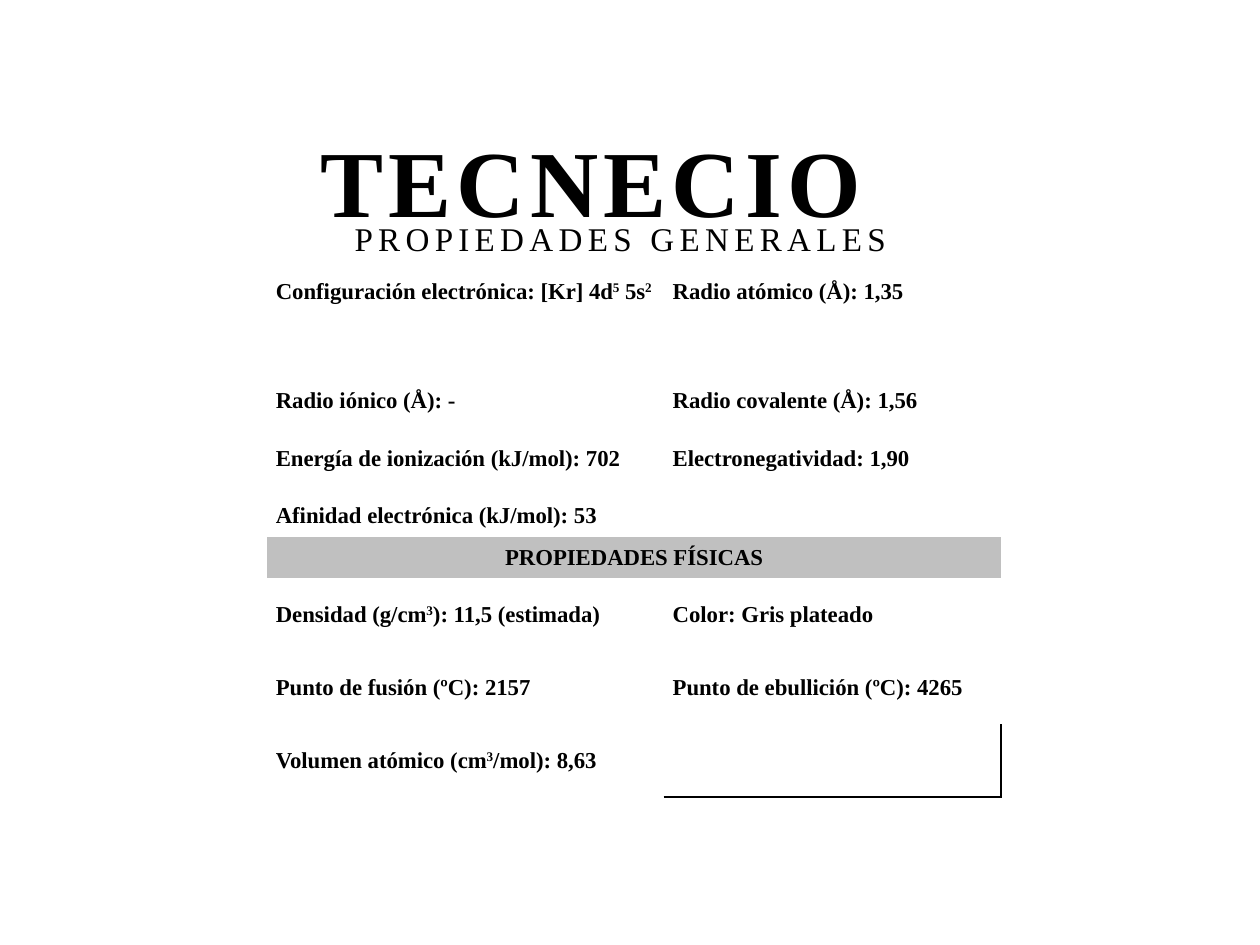
from lxml.etree import SubElement
from pptx import Presentation
from pptx.dml.color import RGBColor
from pptx.enum.text import MSO_ANCHOR as ANCHOR, MSO_AUTO_SIZE as AUTO, PP_ALIGN as ALIGN
from pptx.oxml import parse_xml
from pptx.oxml.ns import nsdecls, qn
from pptx.util import Cm, Pt

FONT = "Times New Roman"
NO_STYLE = "{2D5ABB26-0587-4C30-8999-92F81FD0307C}"
SECTION_ROW = 4
COLUMNS = [8.0, 6.8]
ROWS = [
    (3.56, "Configuración electrónica: [Kr] 4d^5^ 5s^2^", "Radio atómico (Å): 1,35"),
    (0.84, "Radio iónico (Å): -", "Radio covalente (Å): 1,56"),
    (1.47, "Energía de ionización (kJ/mol): 702", "Electronegatividad: 1,90"),
    (0.84, "Afinidad electrónica (kJ/mol): 53", ""),
    (0.84, "PROPIEDADES FÍSICAS", ""),
    (1.47, "Densidad (g/cm^3^): 11,5 (estimada)", "Color: Gris plateado"),
    (1.47, "Punto de fusión (ºC): 2157", "Punto de ebullición (ºC): 4265"),
    (1.47, "Volumen atómico (cm^3^/mol): 8,63", ""),
]


def rgb(value):
    """Return the colour of a hex string."""
    return RGBColor.from_string(value)


def set_attrs(obj, values):
    """Set every attribute of a format dict."""
    for name, value in values.items():
        setattr(obj, name, value)


def add_runs(p, text, size, bold=True):
    """Add runs to a paragraph, raising the parts between carets."""
    for i, part in enumerate(text.split("^")):
        if part:
            r = p.add_run()
            r.text = part
            set_attrs(r.font, {"name": FONT, "size": Pt(size), "bold": bold})
            r.font.color.rgb = rgb("000000")
            if i % 2:
                r.font._element.set("baseline", "30000")


def fill_heading(s, text, box, size, bold):
    """Place a heading placeholder and write its letter-spaced text."""
    set_attrs(s, dict(zip(("left", "top", "width", "height"), map(Cm, box))))
    tf = s.text_frame
    set_attrs(tf, {"word_wrap": True, "auto_size": AUTO.NONE, "vertical_anchor": ANCHOR.BOTTOM})
    p = tf.paragraphs[0]
    set_attrs(p, {"alignment": ALIGN.CENTER, "space_before": Pt(0)})
    add_runs(p, text, size, bold)
    p.runs[0].font._element.set("spc", "300")


def fill_cell(cell, text):
    """Write one table cell without a fill."""
    set_attrs(cell, {
        "margin_left": Cm(0.18), "margin_right": Cm(0.18),
        "margin_top": Cm(0.1), "margin_bottom": Cm(0.1),
        "vertical_anchor": ANCHOR.MIDDLE,
    })
    cell.fill.background()
    p = cell.text_frame.paragraphs[0]
    add_runs(p, text, 13)
    if not text:
        SubElement(p._p, qn("a:endParaRPr"), sz="1300")


def add_border(cell, side, width):
    """Draw a black border on one side of a cell."""
    line = parse_xml(
        f'<a:{side} {nsdecls("a")} w="{Pt(width)}"><a:solidFill>'
        f'<a:srgbClr val="000000"/></a:solidFill></a:{side}>'
    )
    cell._tc.get_or_add_tcPr().insert(0, line)


def add_properties(slide):
    """Add the table of properties."""
    height = sum(row[0] for row in ROWS)
    frame = slide.shapes.add_table(
        len(ROWS), len(COLUMNS), Cm(5.38), Cm(4.11), Cm(sum(COLUMNS)), Cm(height))
    table = frame.table
    set_attrs(table, {"first_row": False, "horz_banding": False})
    table._tbl.tblPr.find(qn("a:tableStyleId")).text = NO_STYLE
    for column, width in zip(table.columns, COLUMNS):
        column.width = Cm(width)
    for i, (row_height, *texts) in enumerate(ROWS):
        table.rows[i].height = Cm(row_height)
        for j, text in enumerate(texts):
            fill_cell(table.cell(i, j), text)
    section = table.cell(SECTION_ROW, 0)
    section.merge(table.cell(SECTION_ROW, 1))
    section.fill.solid()
    section.fill.fore_color.rgb = rgb("C0C0C0")
    section.text_frame.paragraphs[0].alignment = ALIGN.CENTER
    corner = table.cell(len(ROWS) - 1, 1)
    add_border(corner, "lnB", 1.5)
    add_border(corner, "lnR", 0.75)


def main():
    """Build the slide and save it."""
    prs = Presentation()
    set_attrs(prs, {"slide_width": Cm(25.4), "slide_height": Cm(19.05)})
    slide = prs.slides.add_slide(prs.slide_layouts[0])
    title, subtitle = slide.placeholders
    fill_heading(title, "TECNECIO", (3.91, 2.51, 16, 2.39), 54, True)
    add_properties(slide)
    fill_heading(subtitle, "PROPIEDADES GENERALES", (3.91, 4.37, 17.2, 0.97), 18.9, False)
    prs.save("out.pptx")


if __name__ == "__main__":
    main()
